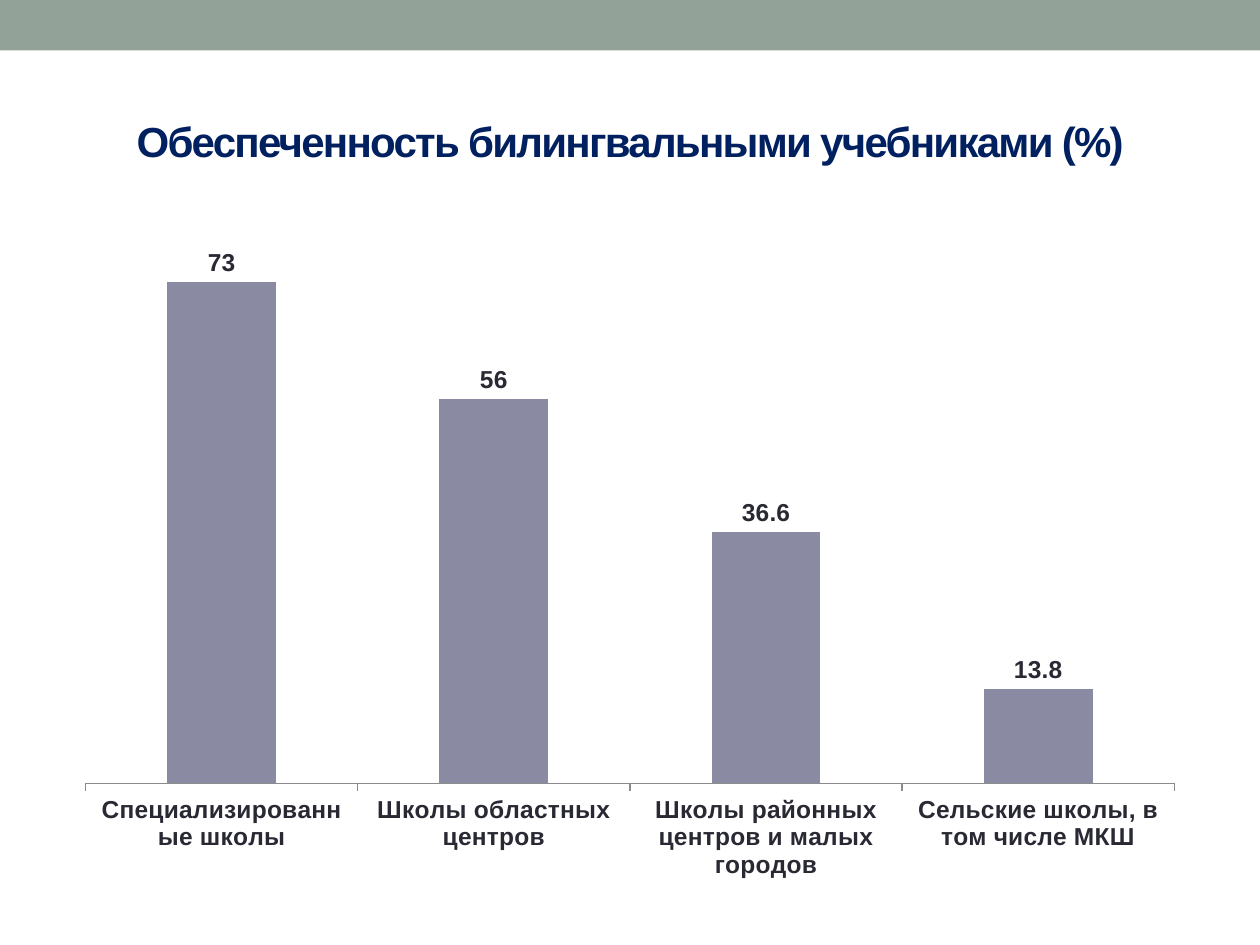
from dataclasses import dataclass

from pptx import Presentation
from pptx.chart.data import CategoryChartData
from pptx.dml.color import RGBColor
from pptx.enum.chart import XL_CHART_TYPE as ChartType
from pptx.enum.chart import XL_LABEL_POSITION as LabelPosition
from pptx.enum.chart import XL_TICK_MARK as TickMark
from pptx.enum.shapes import MSO_SHAPE as Shape
from pptx.enum.text import MSO_ANCHOR as Anchor
from pptx.enum.text import MSO_AUTO_SIZE as AutoSize
from pptx.enum.text import PP_ALIGN as Align
from pptx.util import Pt


@dataclass
class Theme:
    font: str = "Arial"
    band: RGBColor = RGBColor(0x93, 0xA2, 0x99)
    title: RGBColor = RGBColor(0x00, 0x20, 0x60)
    text: RGBColor = RGBColor(0x29, 0x29, 0x34)
    bar: RGBColor = RGBColor(0x8A, 0x8A, 0xA3)
    axis: RGBColor = RGBColor(0x8B, 0x8B, 0x8B)
    title_size: Pt = Pt(24)
    chart_size: Pt = Pt(10)
    label_size: Pt = Pt(14)


theme = Theme()
textbook_supply = {
    "Специализированные школы": 73,
    "Школы областных центров": 56,
    "Школы районных центров и малых городов": 36.6,
    "Сельские школы, в том числе МКШ": 13.8,
}

deck = Presentation()
deck.slide_width, deck.slide_height = Pt(720), Pt(540)
page = deck.slides.add_slide(deck.slide_layouts[5])

# Top band
band = page.shapes.add_shape(Shape.RECTANGLE, 0, 0, deck.slide_width, Pt(28.8))
band.shadow.inherit = False
band.fill.solid()
band.fill.fore_color.rgb = theme.band
band.line.fill.background()

# Title
title = page.shapes.title
title.left, title.top, title.width, title.height = Pt(36), Pt(41.76), Pt(648), Pt(77.76)
frame = title.text_frame
frame.text = "Обеспеченность билингвальными учебниками (%)"
frame.word_wrap = True
frame.auto_size = AutoSize.NONE
frame.vertical_anchor = Anchor.MIDDLE
para = frame.paragraphs[0]
para.alignment = Align.CENTER
span = para.runs[0]
span.font.name = theme.font
span.font.size = theme.title_size
span.font.bold = True
span.font.color.rgb = theme.title
span._r.get_or_add_rPr().set("spc", "-100")  # tighter letter spacing

# Column chart
data = CategoryChartData()
data.categories = list(textbook_supply)
data.add_series("Series 1", list(textbook_supply.values()))
chart = page.shapes.add_chart(
    ChartType.COLUMN_CLUSTERED, Pt(36), Pt(126), Pt(648), Pt(383.76), data
).chart
chart.has_title = False
chart.has_legend = False
chart.font.name = theme.font
chart.font.size = theme.chart_size
chart.font.color.rgb = theme.text

# Axes
values = chart.value_axis
values.visible = False
values.has_major_gridlines = False
values.minimum_scale, values.maximum_scale = 0, 80
schools = chart.category_axis
schools.major_tick_mark = TickMark.OUTSIDE
schools.format.line.color.rgb = theme.axis
schools.format.line.width = Pt(0.75)

# Bars and their labels
plot = chart.plots[0]
plot.gap_width = 150
plot.vary_by_categories = False
bars = plot.series[0]
bars.format.fill.solid()
bars.format.fill.fore_color.rgb = theme.bar
labels = bars.data_labels
labels.show_value = True
labels.position = LabelPosition.OUTSIDE_END
for font in (schools.tick_labels.font, labels.font):
    font.name = theme.font
    font.size = theme.label_size
    font.bold = True
    font.color.rgb = theme.text

deck.save("out.pptx")
